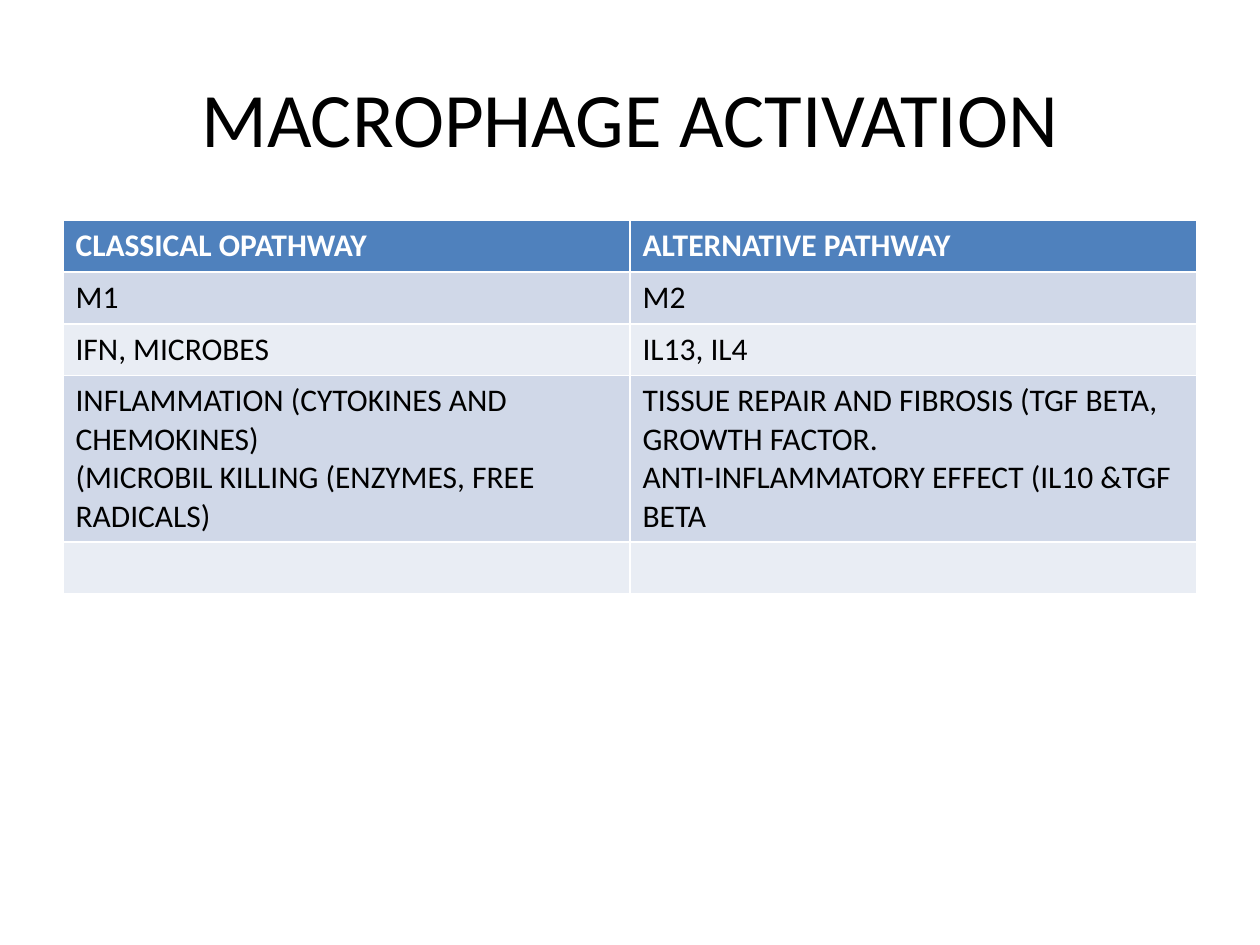
from dataclasses import dataclass

from pptx import Presentation
from pptx.dml.color import RGBColor as RGB
from pptx.enum.text import MSO_ANCHOR as Anchor, PP_ALIGN as Align
from pptx.util import Inches, Pt


@dataclass(frozen=True)
class Theme:
    font: str = "Calibri"
    title_size: int = 44
    body_size: int = 18
    text: str = "000000"
    header_text: str = "FFFFFF"
    header_fill: str = "4F81BD"
    bands: tuple = ("D0D8E8", "E9EDF4")


class SlideBuilder:
    def __init__(self, prs, theme):
        self.theme = theme
        self.s = prs.slides.add_slide(prs.slide_layouts[5])

    def style(self, p, size, color, bold=False):
        p.font.name = self.theme.font
        p.font.size = Pt(size)
        p.font.bold = bold
        p.font.color.rgb = RGB.from_string(color)

    def title(self, text, left, top, width, height):
        sp = self.s.shapes.title
        sp.left, sp.top = Inches(left), Inches(top)
        sp.width, sp.height = Inches(width), Inches(height)
        tf = sp.text_frame
        tf.text = text
        tf.vertical_anchor = Anchor.MIDDLE
        p = tf.paragraphs[0]
        p.alignment = Align.CENTER
        self.style(p, self.theme.title_size, self.theme.text)

    def table(self, rows, left, top, width, row_height):
        frame = self.s.shapes.add_table(
            len(rows), len(rows[0]), Inches(left), Inches(top),
            Inches(width), Inches(row_height * len(rows)))
        for i, row in enumerate(rows):
            for j, text in enumerate(row):
                self.cell(frame.table.cell(i, j), text, i)

    def cell(self, cell, text, row):
        t = self.theme
        header = row == 0
        fill = t.header_fill if header else t.bands[(row - 1) % len(t.bands)]
        cell.fill.solid()
        cell.fill.fore_color.rgb = RGB.from_string(fill)
        cell.text = text
        for p in cell.text_frame.paragraphs:
            self.style(p, t.body_size, t.header_text if header else t.text, header)


def main():
    prs = Presentation()
    prs.slide_width, prs.slide_height = Inches(10), Inches(7.5)
    slide = SlideBuilder(prs, Theme())
    slide.title("MACROPHAGE ACTIVATION", 0.5, 0.3, 9, 1.25)
    pathways = [
        ("CLASSICAL OPATHWAY", "ALTERNATIVE PATHWAY"),
        ("M1", "M2"),
        ("IFN, MICROBES", "IL13, IL4"),
        ("INFLAMMATION (CYTOKINES AND CHEMOKINES)\n"
         "(MICROBIL KILLING (ENZYMES, FREE RADICALS)",
         "TISSUE REPAIR AND FIBROSIS (TGF BETA, GROWTH FACTOR.\n"
         "ANTI-INFLAMMATORY EFFECT (IL10 &TGF BETA"),
        ("", ""),
    ]
    slide.table(pathways, 0.5, 1.75, 9, 0.41)
    prs.save("out.pptx")


if __name__ == "__main__":
    main()
